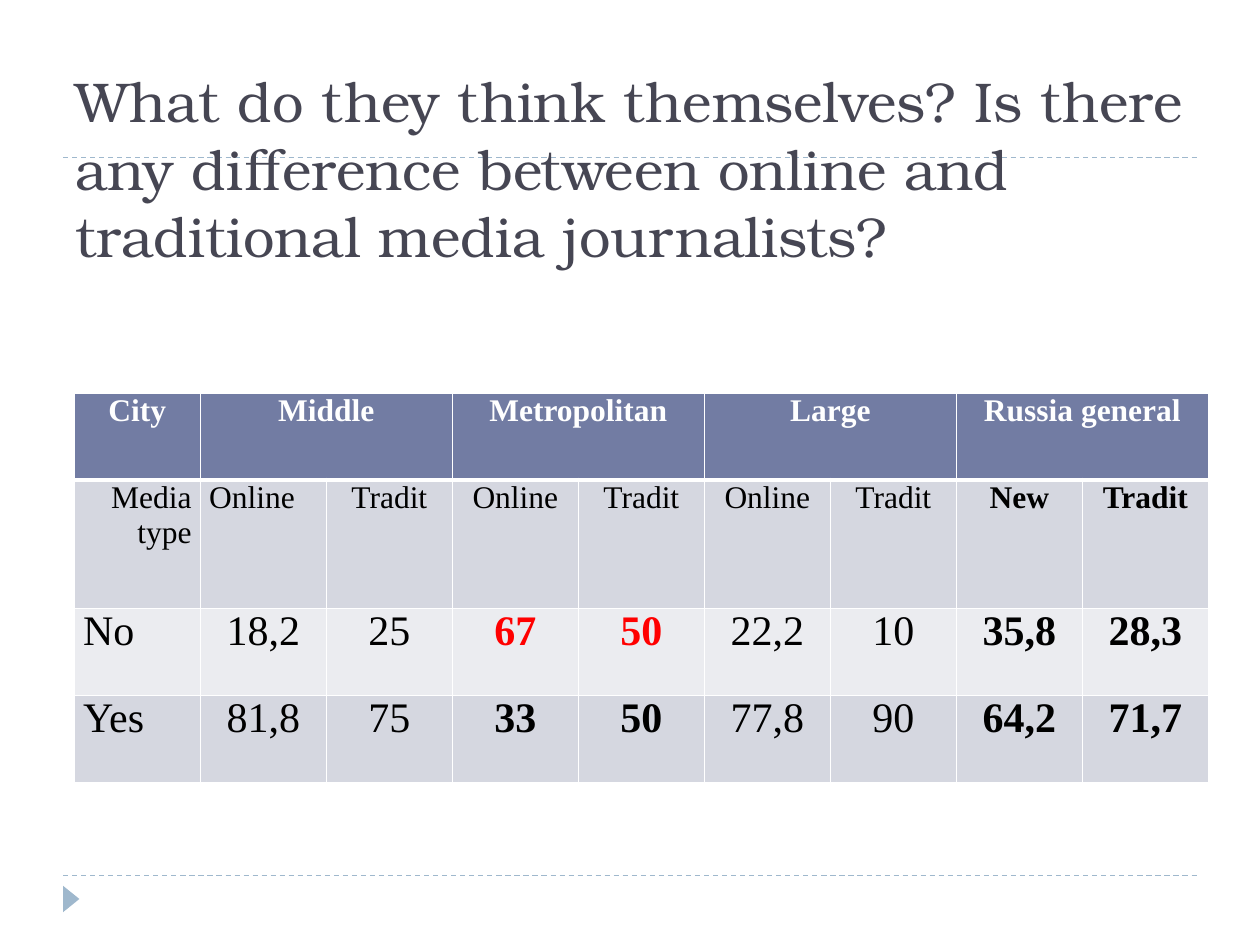
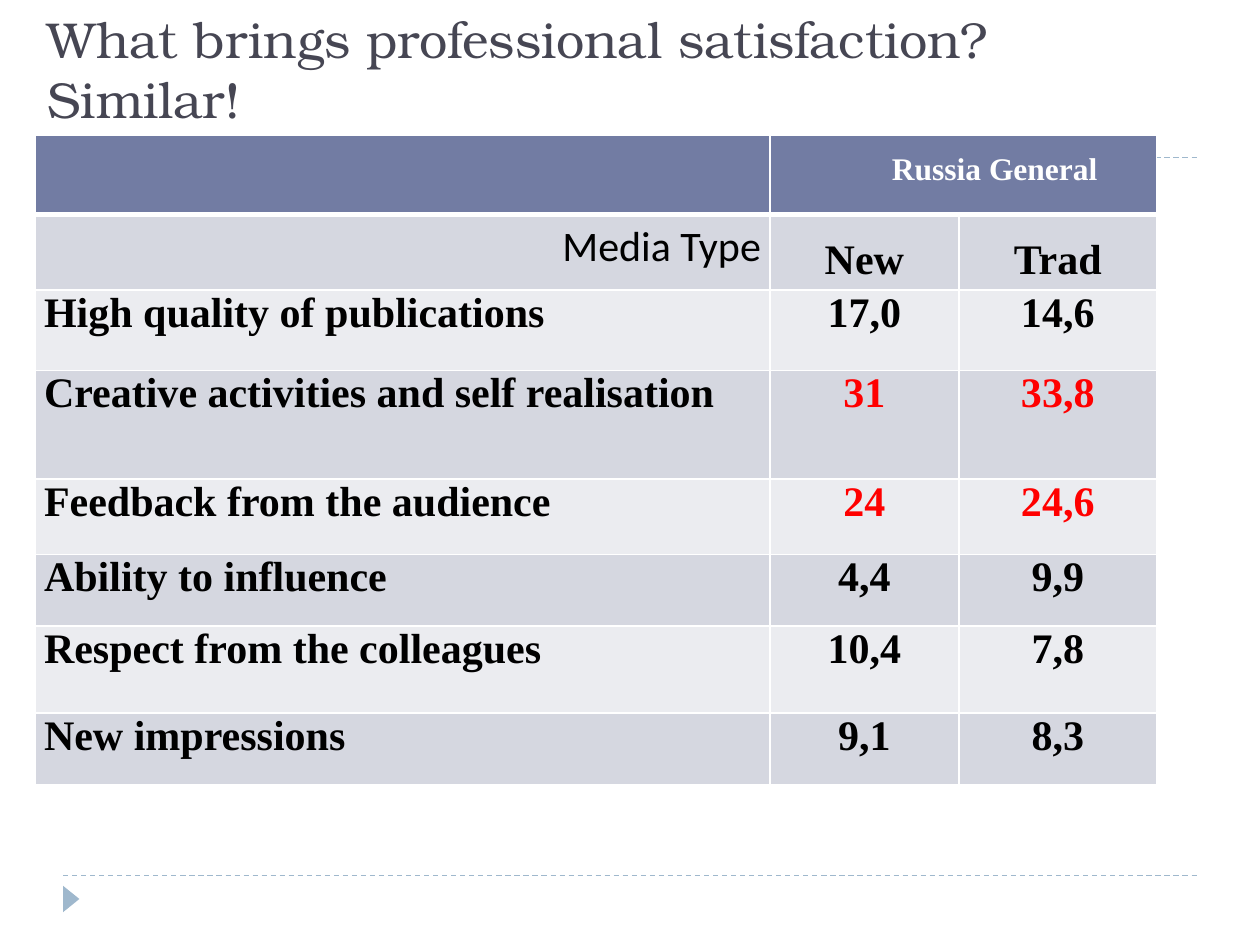
"""Build two slides comparing online and traditional media journalists."""
import lxml.etree
import pptx
import pptx.dml.color
import pptx.enum.dml
import pptx.enum.shapes
import pptx.enum.text
import pptx.oxml.ns
import pptx.util

Inches = pptx.util.Inches
Align = pptx.enum.text.PP_ALIGN

THEME = {
    "title": "464653", "accent": "9FB8CD", "header": "727CA3",
    "bands": ("D5D7E0", "EBECF0"), "border": "FFFFFF",
    "light": "FFFFFF", "dark": "000000", "highlight": "FF0000",
    "title_font": "TeX Gyre Bonum", "table_font": "Times New Roman",
    "plain_font": "Calibri", "small": 18, "large": 24,
    "thin": 1, "thick": 3, "rule": 0.75,
}
RULES = {"left": 0.5, "right": 9.5, "heights": (6.95, 1.25)}
MARKER = (0.46, 7.07, 0.21, 0.13)

HEADER = {"size": THEME["small"], "bold": True, "color": THEME["light"]}
SMALL = {"size": THEME["small"]}
BOLD = {"bold": True}
RED = {"bold": True, "color": THEME["highlight"]}
RIGHT = {"align": Align.RIGHT}
JUSTIFY = {"align": Align.JUSTIFY}

OPINION = {
    "title": "What do they think themselves? Is there any difference "
             "between online and traditional media journalists?",
    "title_box": (0.5, 0.17, 9, 2.01),
    "title_size": 32,
    "origin": (0.59, 3.12),
    "columns": [1] * 9,
    "heights": [0.69, 1.02, 0.69, 0.69],
    "rows": [
        ["City", "Middle", None, "Metropolitan", None, "Large", None, "Russia general", None],
        ["Media type", "Online", "Tradit", "Online", "Tradit", "Online", "Tradit", "New", "Tradit"],
        ["No", "18,2", "25", "67", "50", "22,2", "10", "35,8", "28,3"],
        ["Yes", "81,8", "75", "33", "50", "77,8", "90", "64,2", "71,7"],
    ],
    "row_formats": {0: HEADER, 1: SMALL},
    "lead_format": JUSTIFY,
    "cell_formats": {
        (1, 0): RIGHT, (1, 1): {"align": Align.LEFT}, (2, 3): RED, (2, 4): RED,
        **{(row, column): BOLD for row in (1, 2, 3) for column in (7, 8)},
        (3, 3): BOLD, (3, 4): BOLD,
    },
}

SATISFACTION = {
    "title": "What brings professional satisfaction? Similar!",
    "title_box": (0.28, 0, 9.22, 1.07),
    "title_size": 28.8,
    "origin": (0.28, 1.07),
    "columns": [5.83, 1.5, 1.57],
    "heights": [0.63, 0.48, 0.64, 0.86, 0.6, 0.57, 0.69, 0.57],
    "rows": [
        ["", "Russia General", None],
        ["Media Type", "New", "Trad"],
        ["High quality of publications", "17,0", "14,6"],
        ["Creative activities and self realisation", "31", "33,8"],
        ["Feedback from the audience", "24", "24,6"],
        ["Ability to influence ", "4,4", "9,9"],
        ["Respect from the colleagues", "10,4", "7,8"],
        ["New impressions", "9,1", "8,3"],
    ],
    "row_formats": {
        0: {**HEADER, "spacing": 1.5},
        1: {**BOLD, "spacing": 1.5},
        **{row: BOLD for row in range(2, 8)},
    },
    "lead_format": JUSTIFY,
    "cell_formats": {
        (0, 1): {"indent": 0.5},
        (1, 0): {**RIGHT, "bold": False, "name": THEME["plain_font"], "spacing": 1.15},
        **{(row, column): RED for row in (3, 4) for column in (1, 2)},
    },
}

CELL_DEFAULTS = {
    "size": THEME["large"], "bold": False, "color": THEME["dark"],
    "name": THEME["table_font"], "align": Align.CENTER, "spacing": 1, "indent": 0,
}


def rgb(value):
    return pptx.dml.color.RGBColor.from_string(value)


def set_all(target, values):
    for key, value in values.items():
        setattr(target, key, value)


def style_font(font, name, size, bold, color):
    set_all(font, {"name": name, "size": pptx.util.Pt(size), "bold": bold})
    font.color.rgb = rgb(color)


def add_decor(slide):
    for height in RULES["heights"]:
        rule = slide.shapes.add_connector(
            pptx.enum.shapes.MSO_CONNECTOR.STRAIGHT,
            Inches(RULES["left"]), Inches(height), Inches(RULES["right"]), Inches(height))
        rule.line.color.rgb = rgb(THEME["accent"])
        set_all(rule.line, {"width": pptx.util.Pt(THEME["rule"]),
                            "dash_style": pptx.enum.dml.MSO_LINE.DASH})
        lxml.etree.SubElement(rule._element.spPr, pptx.oxml.ns.qn("a:effectLst"))
    marker = slide.shapes.add_shape(
        pptx.enum.shapes.MSO_SHAPE.ISOSCELES_TRIANGLE, *map(Inches, MARKER))
    marker.rotation = 90
    marker.shadow.inherit = False
    marker.fill.solid()
    marker.fill.fore_color.rgb = rgb(THEME["accent"])
    marker.line.fill.background()


def add_title(slide, content):
    title = slide.shapes.add_textbox(*map(Inches, content["title_box"])).text_frame
    set_all(title, {"word_wrap": True, "text": content["title"],
                    "vertical_anchor": pptx.enum.text.MSO_ANCHOR.BOTTOM})
    style_font(title.paragraphs[0].runs[0].font, THEME["title_font"],
               content["title_size"], False, THEME["title"])


def add_borders(cell, row):
    properties = cell._tc.get_or_add_tcPr()
    thick_side = {0: "B", 1: "T"}.get(row)
    for side in "LRTB":
        width = THEME["thick" if side == thick_side else "thin"]
        border = lxml.etree.SubElement(
            properties, pptx.oxml.ns.qn(f"a:ln{side}"), w=str(pptx.util.Pt(width)))
        fill = lxml.etree.SubElement(border, pptx.oxml.ns.qn("a:solidFill"))
        lxml.etree.SubElement(fill, pptx.oxml.ns.qn("a:srgbClr"), val=THEME["border"])


def write_cell(cell, text, style):
    cell.text = text
    paragraph = cell.text_frame.paragraphs[0]
    set_all(paragraph, {"alignment": style["align"], "line_spacing": float(style["spacing"])})
    if style["indent"]:
        paragraph._p.get_or_add_pPr().set("marL", str(Inches(style["indent"])))
    for run in paragraph.runs:
        style_font(run.font, style["name"], style["size"], style["bold"], style["color"])


def add_grid(slide, content):
    rows, columns, heights = content["rows"], content["columns"], content["heights"]
    grid = slide.shapes.add_table(
        len(rows), len(columns), *map(Inches, content["origin"]),
        Inches(sum(columns)), Inches(sum(heights))).table
    set_all(grid, {"first_row": False, "horz_banding": False})
    for column, width in zip(grid.columns, columns):
        column.width = Inches(width)
    for index, texts in enumerate(rows):
        grid.rows[index].height = Inches(heights[index])
        for position, text in enumerate(texts):
            cell = grid.cell(index, position)
            set_all(cell, {"margin_left": Inches(0.07), "margin_right": Inches(0.07),
                           "margin_top": 0, "margin_bottom": 0})
            add_borders(cell, index)
            cell.fill.solid()
            cell.fill.fore_color.rgb = rgb(
                THEME["bands"][(index - 1) % 2] if index else THEME["header"])
            if text is None:
                grid.cell(index, position - 1).merge(cell)
                continue
            lead = content["lead_format"] if position == 0 and index > 0 else {}
            write_cell(cell, text, {
                **CELL_DEFAULTS, **content["row_formats"].get(index, {}), **lead,
                **content["cell_formats"].get((index, position), {})})


def main():
    deck = pptx.Presentation()
    set_all(deck, {"slide_width": Inches(10), "slide_height": Inches(7.5)})
    for content in (OPINION, SATISFACTION):
        slide = deck.slides.add_slide(deck.slide_layouts[6])
        add_decor(slide)
        add_title(slide, content)
        add_grid(slide, content)
    deck.save("out.pptx")


if __name__ == "__main__":
    main()
